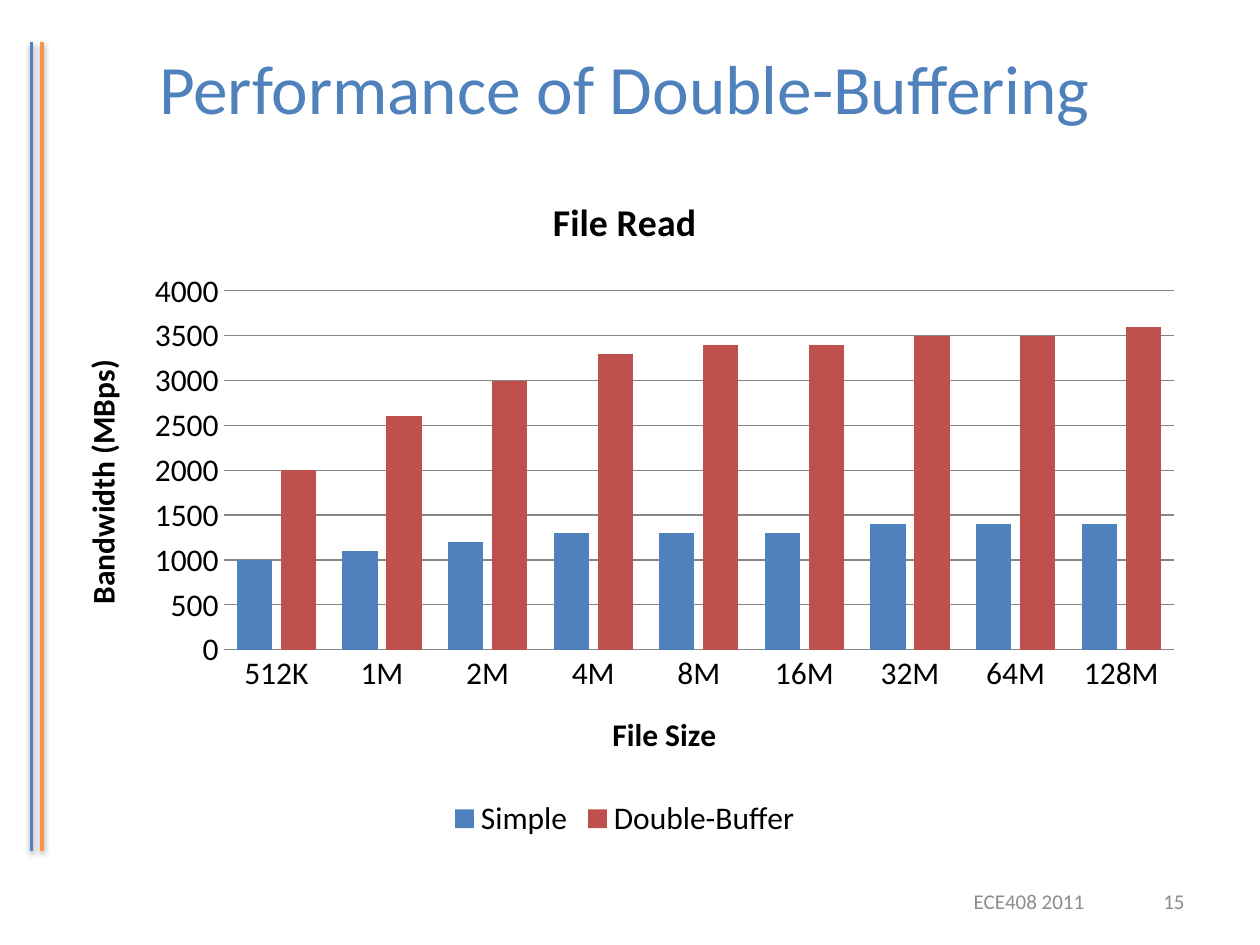
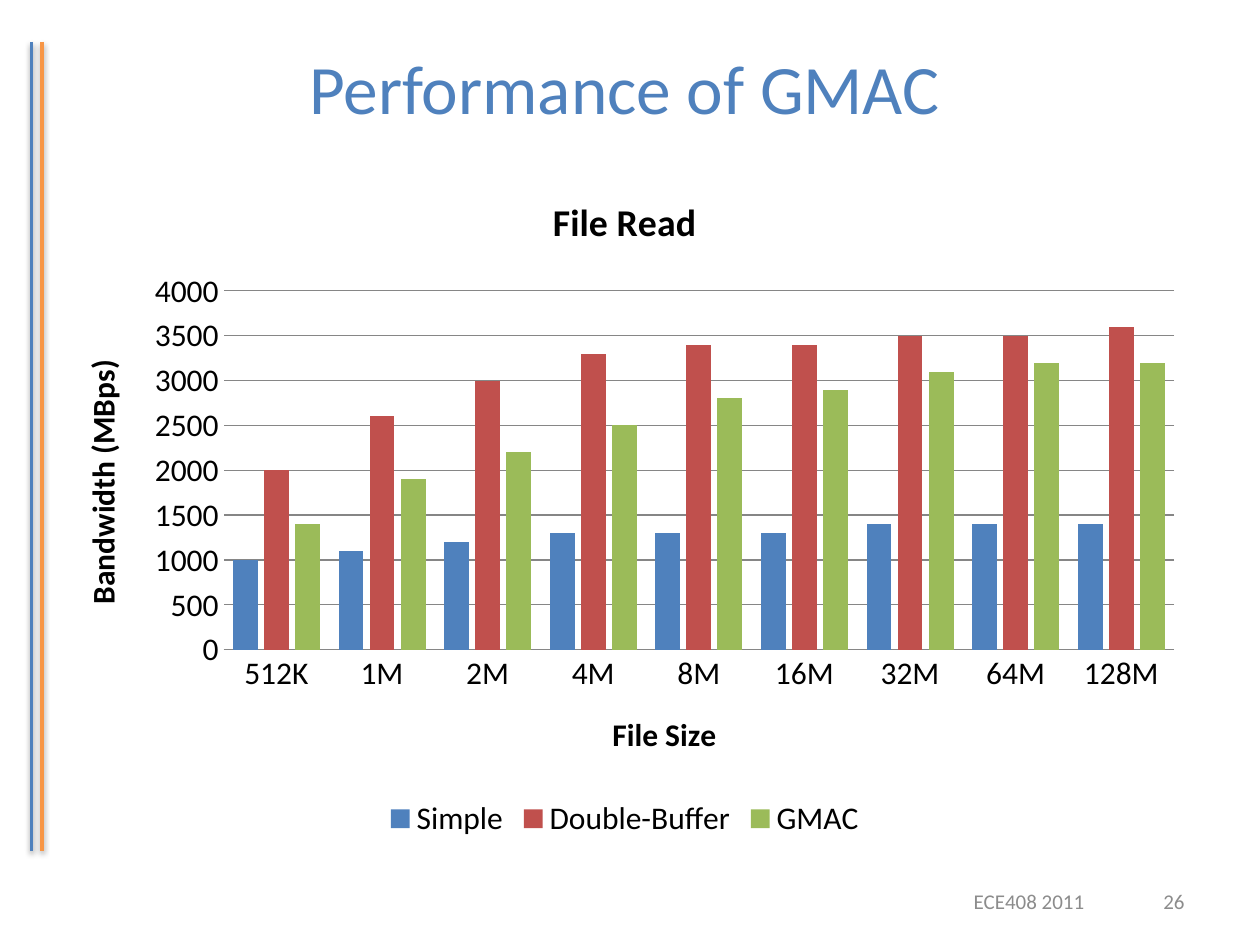
"""Build two slides that compare file read bandwidth by buffering scheme."""
import lxml.etree
import pptx
import pptx.chart.data
import pptx.dml.color
import pptx.enum.chart
import pptx.enum.shapes
import pptx.enum.text
import pptx.oxml
import pptx.oxml.ns
import pptx.util

FONT = "Calibri"
BLUE, ORANGE, RED, GREEN = "4F81BD", "F79646", "C0504D", "9BBB59"
BLACK, FOOTER_GRAY, GRID_GRAY = "000000", "8C8C8C", "868686"
UNITS_PER_INCH = 12
TITLE_BOX = (5, 3.6, 109, 9.4)
CHART_BOX = (5, 16, 109, 64.4)
COURSE_BOX = (90, 83.4, 16, 4.8)
NUMBER_BOX = (107, 83.4, 7, 4.8)
RAIL_TOP, RAIL_BOTTOM = 4, 81
RAILS = ((3, BLUE), (4, ORANGE))
ALIGN = pptx.enum.text.PP_ALIGN

FILE_SIZES = ("512K", "1M", "2M", "4M", "8M", "16M", "32M", "64M", "128M")
SIMPLE = ("Simple", (1000, 1100, 1200, 1300, 1300, 1300, 1400, 1400, 1400), BLUE)
DOUBLE_BUFFER = ("Double-Buffer", (2000, 2600, 3000, 3300, 3400, 3400, 3500, 3500, 3600), RED)
GMAC = ("GMAC", (1400, 1900, 2200, 2500, 2800, 2900, 3100, 3200, 3200), GREEN)
SLIDES = (
    ("Performance of Double-Buffering", "15", (SIMPLE, DOUBLE_BUFFER)),
    ("Performance of GMAC", "26", (SIMPLE, DOUBLE_BUFFER, GMAC)),
)


def color(hex_value):
    """Turn a hex string into a colour."""
    return pptx.dml.color.RGBColor.from_string(hex_value)


def grid(*units):
    """Turn grid units into lengths."""
    return [pptx.util.Inches(unit / UNITS_PER_INCH) for unit in units]


def style_font(font, size, hex_value, bold=False):
    """Set the face, size, colour and weight of a font."""
    font.name = FONT
    font.size = pptx.util.Pt(size)
    font.color.rgb = color(hex_value)
    font.bold = bold


def write(shape, text, size, hex_value, alignment):
    """Put one vertically centred line of text in a shape."""
    frame = shape.text_frame
    frame.text = text
    frame.word_wrap = True
    frame.auto_size = pptx.enum.text.MSO_AUTO_SIZE.NONE
    frame.vertical_anchor = pptx.enum.text.MSO_ANCHOR.MIDDLE
    paragraph = frame.paragraphs[0]
    paragraph.alignment = alignment
    style_font(paragraph.runs[0].font, size, hex_value)


def add_title(slide, text):
    """Place and fill the title placeholder."""
    title = slide.shapes.title
    title.left, title.top, title.width, title.height = grid(*TITLE_BOX)
    write(title, text, 39.6, BLUE, ALIGN.CENTER)


def add_rail(slide, column, hex_value):
    """Draw one vertical line with a soft shadow."""
    rail = slide.shapes.add_connector(
        pptx.enum.shapes.MSO_CONNECTOR.STRAIGHT,
        *grid(column, RAIL_TOP, column, RAIL_BOTTOM))
    rail.line.color.rgb = color(hex_value)
    rail.line.width = pptx.util.Pt(2)
    properties = rail.element.spPr
    effects = lxml.etree.SubElement(properties, pptx.oxml.ns.qn("a:effectLst"))
    effects.append(pptx.oxml.parse_xml(
        f'<a:outerShdw {pptx.oxml.ns.nsdecls("a")} blurRad="{pptx.util.Pt(3.1)}" '
        f'dist="{pptx.util.Pt(1.6)}" dir="5400000" rotWithShape="0">'
        f'<a:srgbClr val="{BLACK}"><a:alpha val="38000"/></a:srgbClr></a:outerShdw>'))


def add_footer(slide, box, text, alignment):
    """Add one small grey footer text."""
    write(slide.shapes.add_textbox(*grid(*box)), text, 12, FOOTER_GRAY, alignment)


def style_axis(axis, title):
    """Give an axis its title, labels and tick style."""
    axis.axis_title.text_frame.text = title
    run = axis.axis_title.text_frame.paragraphs[0].runs[0]
    style_font(run.font, 18, BLACK, bold=True)
    style_font(axis.tick_labels.font, 18, BLACK)
    axis.major_tick_mark = pptx.enum.chart.XL_TICK_MARK.NONE
    axis.minor_tick_mark = pptx.enum.chart.XL_TICK_MARK.NONE


def style_value_axis(axis):
    """Scale the bandwidth axis, draw its grid and turn its title."""
    style_axis(axis, "Bandwidth (MBps)")
    axis.minimum_scale, axis.maximum_scale, axis.major_unit = 0, 4000, 500
    axis.format.line.fill.background()
    axis.has_major_gridlines = True
    axis.major_gridlines.format.line.color.rgb = color(GRID_GRAY)
    axis.major_gridlines.format.line.width = pptx.util.Pt(0.75)
    body = axis.axis_title.element.xpath(".//a:bodyPr")[0]
    body.set("rot", "-5400000")
    body.set("vert", "horz")


def add_bandwidth_chart(slide, schemes):
    """Add the clustered column chart of the given schemes."""
    data = pptx.chart.data.CategoryChartData(number_format="0")
    data.categories = FILE_SIZES
    for name, values, _ in schemes:
        data.add_series(name, values)
    chart = slide.shapes.add_chart(
        pptx.enum.chart.XL_CHART_TYPE.COLUMN_CLUSTERED, *grid(*CHART_BOX), data).chart
    style_font(chart.font, 18, BLACK)

    chart.has_title = True
    chart.chart_title.text_frame.text = "File Read"
    title_run = chart.chart_title.text_frame.paragraphs[0].runs[0]
    style_font(title_run.font, 21.6, BLACK, bold=True)
    chart.chart_title.include_in_layout = False

    chart.has_legend = True
    chart.legend.position = pptx.enum.chart.XL_LEGEND_POSITION.BOTTOM
    chart.legend.include_in_layout = False
    style_font(chart.legend.font, 18, BLACK)

    style_axis(chart.category_axis, "File Size")
    chart.category_axis.format.line.color.rgb = color(GRID_GRAY)
    style_value_axis(chart.value_axis)

    plot = chart.plots[0]
    plot.vary_by_categories = False
    plot.gap_width, plot.overlap = 75, -25
    for series, (_, _, hex_value) in zip(plot.series, schemes):
        series.format.fill.solid()
        series.format.fill.fore_color.rgb = color(hex_value)


def main():
    """Build and save the presentation."""
    presentation = pptx.Presentation()
    presentation.slide_width = pptx.util.Inches(10)
    presentation.slide_height = pptx.util.Inches(7.5)
    title_only = presentation.slide_layouts.get_by_name("Title Only")
    for title, number, schemes in SLIDES:
        slide = presentation.slides.add_slide(title_only)
        for column, hex_value in RAILS:
            add_rail(slide, column, hex_value)
        add_title(slide, title)
        add_bandwidth_chart(slide, schemes)
        add_footer(slide, COURSE_BOX, "ECE408 2011", ALIGN.CENTER)
        add_footer(slide, NUMBER_BOX, number, ALIGN.RIGHT)
    presentation.save("out.pptx")


if __name__ == "__main__":
    main()
